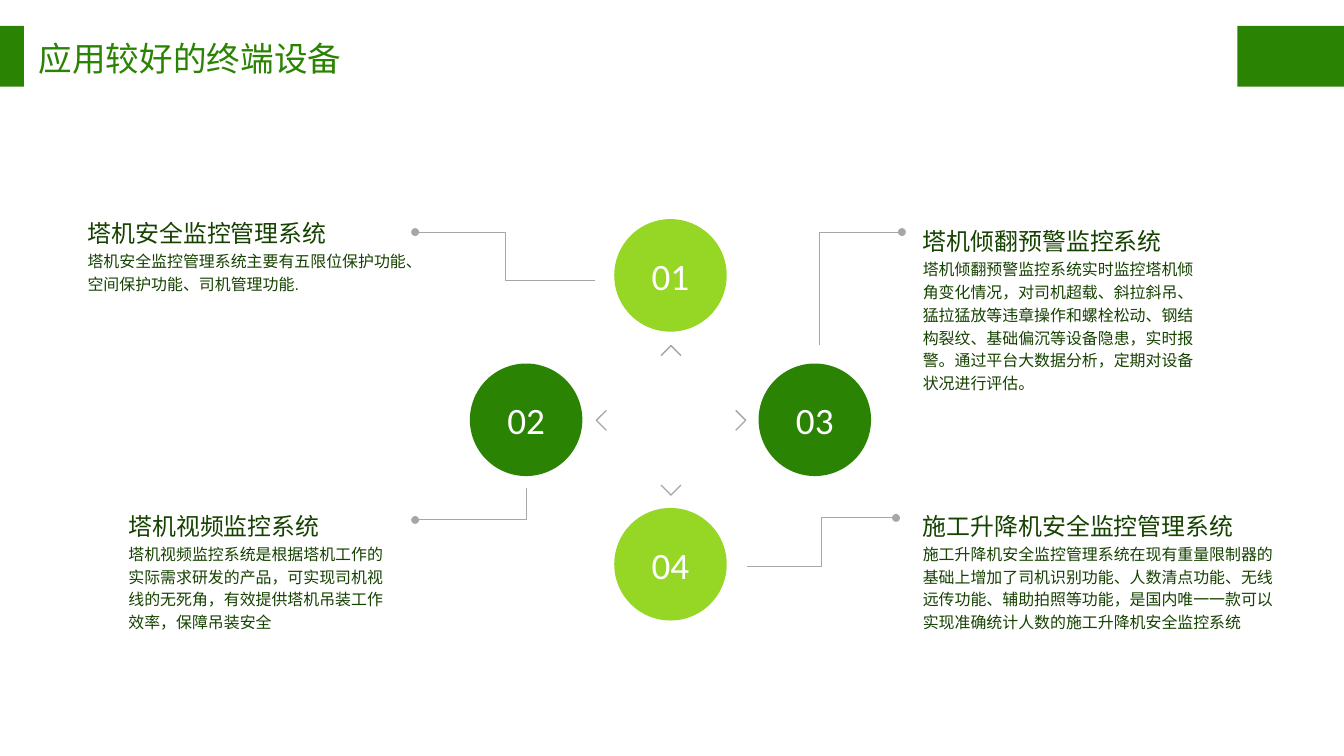
from pptx import Presentation
from pptx.dml.color import RGBColor
from pptx.enum.shapes import MSO_SHAPE
from pptx.enum.text import MSO_ANCHOR, MSO_AUTO_SIZE, PP_ALIGN
from pptx.oxml import parse_xml
from pptx.oxml.ns import nsdecls, qn
from pptx.util import Pt

PX = 9525
GREEN = RGBColor(0x2B, 0x83, 0x03)
LIME = RGBColor(0x96, 0xD6, 0x24)
DARK = RGBColor(0x16, 0x42, 0x01)
GRAY = RGBColor(0xA6, 0xA6, 0xA6)
WHITE = RGBColor(0xFF, 0xFF, 0xFF)

deck = Presentation()
deck.slide_width, deck.slide_height = 1350 * PX, 759 * PX
slide = deck.slides.add_slide(deck.slide_layouts[6])
shapes = slide.shapes


def add_block(kind, box, color):
    block = shapes.add_shape(kind, *[n * PX for n in box])
    block.shadow.inherit = False
    block.fill.solid()
    block.fill.fore_color.rgb = color
    block.line.fill.background()
    return block


def add_path(points, width):
    """Draw an open, unfilled gray line through the points."""
    pen = shapes.build_freeform(*points[0], scale=PX)
    pen.add_line_segments(points[1:], close=False)
    path = pen.convert_to_shape()
    path.shadow.inherit = False
    path.fill.background()
    path.line.color.rgb = GRAY
    path.line.width = Pt(width)
    return path


# Header: title between two bars
for left, width in ((0, 24), (1243, 107)):
    add_block(MSO_SHAPE.RECTANGLE, (left, 26, width, 61), GREEN)

# Ring of numbered circles, each with a chevron pointing at it
MID_X, MID_Y = 674, 422
STEP, SIZE = 145, 113
TIP, WING = 75, 10
ring = (
    ("01", 0, -1, LIME),
    ("02", -1, 0, GREEN),
    ("03", 1, 0, GREEN),
    ("04", 0, 1, LIME),
)
for label, dx, dy, color in ring:
    left = MID_X + STEP * dx - 57
    top = MID_Y + STEP * dy - 57
    disc = add_block(MSO_SHAPE.OVAL, (left, top, SIZE, SIZE), color)
    frame = disc.text_frame
    frame.text = label
    frame.word_wrap = False
    frame.vertical_anchor = MSO_ANCHOR.MIDDLE
    para = frame.paragraphs[0]
    para.alignment = PP_ALIGN.CENTER
    font = para.runs[0].font
    font.name, font.size, font.color.rgb = "Calibri", Pt(28), WHITE

    x, y = MID_X + TIP * dx, MID_Y + TIP * dy
    back_x, back_y = x - WING * dx, y - WING * dy
    add_path([(back_x - WING * dy, back_y - WING * dx), (x, y),
              (back_x + WING * dy, back_y + WING * dx)], 1)

# Leader lines ending in a dot
leaders = (
    [(598, 282), (508, 282), (508, 233), (417, 233)],
    [(529, 490), (529, 522), (417, 522)],
    [(823, 346), (823, 233), (906, 233)],
    [(750, 569), (825, 569), (825, 520), (900, 520)],
)
for points in leaders:
    leader = add_path(points, 0.75)
    dot = parse_xml(f'<a:tailEnd {nsdecls("a")} type="oval"/>')
    leader.element.spPr.find(qn("a:ln")).append(dot)

# Title and device notes: box, line spacing, then (text, size, color) lines
notes = (
    ((39, 38, 446, 40), 1.0, (("应用较好的终端设备", 25.3, GREEN),)),
    ((88, 214, 326, 82), 1.2, (
        ("塔机安全监控管理系统", 18, DARK),
        ("塔机安全监控管理系统主要有五限位保护功能、空间保护功能、"
         "司机管理功能.", 12, DARK))),
    ((129, 508, 266, 128), 1.2, (
        ("塔机视频监控系统", 18, DARK),
        ("塔机视频监控系统是根据塔机工作的实际需求研发的产品，"
         "可实现司机视线的无死角，有效提供塔机吊装工作效率，"
         "保障吊装安全", 12, DARK))),
    ((927, 222, 283, 174), 1.2, (
        ("塔机倾翻预警监控系统", 18, DARK),
        ("塔机倾翻预警监控系统实时监控塔机倾角变化情况，"
         "对司机超载、斜拉斜吊、猛拉猛放等违章操作和螺栓松动、"
         "钢结构裂纹、基础偏沉等设备隐患，实时报警。"
         "通过平台大数据分析，定期对设备状况进行评估。", 12, DARK))),
    ((927, 508, 358, 128), 1.2, (
        ("施工升降机安全监控管理系统", 18, DARK),
        ("施工升降机安全监控管理系统在现有重量限制器的基础上"
         "增加了司机识别功能、人数清点功能、无线远传功能、"
         "辅助拍照等功能，是国内唯一一款可以实现准确统计人数的"
         "施工升降机安全监控系统", 12, DARK))),
)
for box, space, lines in notes:
    frame = shapes.add_textbox(*[n * PX for n in box]).text_frame
    frame.word_wrap = True
    frame.auto_size = MSO_AUTO_SIZE.SHAPE_TO_FIT_TEXT
    frame.margin_left = frame.margin_right = 0
    frame.margin_top = frame.margin_bottom = 0
    frame.text = "\n".join(line[0] for line in lines)
    for para, (_, size, color) in zip(frame.paragraphs, lines):
        para.line_spacing = space
        font = para.runs[0].font
        font.name, font.size, font.color.rgb = "Arial", Pt(size), color

deck.save("out.pptx")
